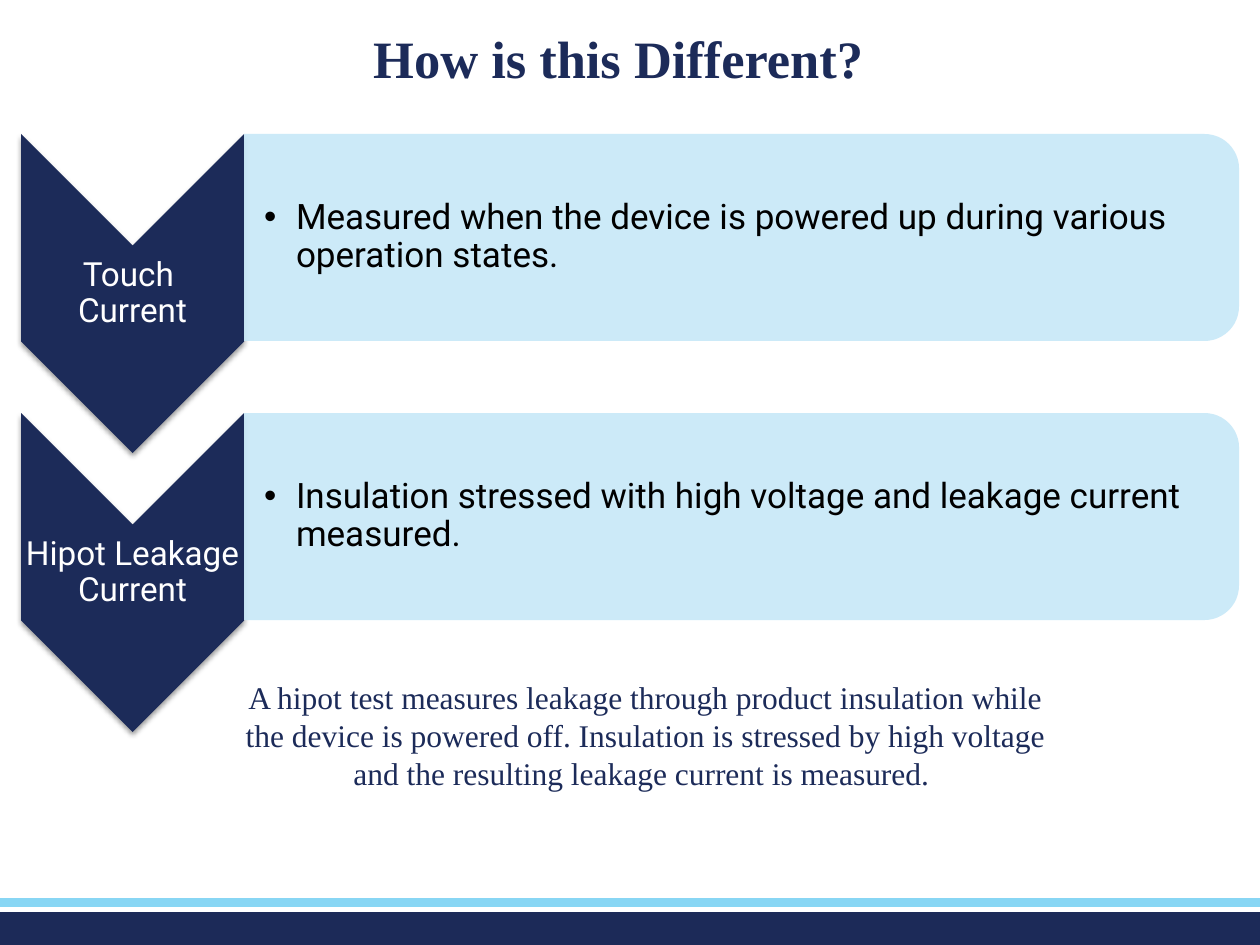
"""Build a slide that sets touch current against hipot leakage current."""
from dataclasses import dataclass

from lxml import etree
from pptx import Presentation
from pptx.dml.color import RGBColor
from pptx.enum.shapes import MSO_SHAPE
from pptx.enum.text import MSO_ANCHOR, MSO_AUTO_SIZE, PP_ALIGN
from pptx.oxml.ns import qn
from pptx.util import Emu, Pt

RECT = MSO_SHAPE.RECTANGLE
CHEVRON = MSO_SHAPE.CHEVRON
ROUND = MSO_SHAPE.ROUND_2_SAME_RECTANGLE
TOP, MIDDLE = MSO_ANCHOR.TOP, MSO_ANCHOR.MIDDLE
LEFT, CENTER = PP_ALIGN.LEFT, PP_ALIGN.CENTER
FIXED = MSO_AUTO_SIZE.NONE

NAVY = RGBColor(0x1C, 0x2B, 0x59)
DARK = RGBColor(0x1C, 0x2A, 0x58)
SKY = RGBColor(0x88, 0xD6, 0xF4)
PALE = RGBColor(0xC7, 0xE8, 0xF8)
WHITE = RGBColor(0xFF, 0xFF, 0xFF)
BLACK = RGBColor(0, 0, 0)

SERIF, SANS = "Times New Roman", "Roboto"
WIDE, HIGH = 1260, 945
ROW_TOP, ROW_STEP = 134, 279
PAD = (13, 6, 13, 6)


@dataclass(frozen=True)
class Box:
    """A visible area in px."""
    x: int
    y: int
    w: int
    h: int


@dataclass(frozen=True)
class Row:
    """A chevron label and its point."""
    label: str
    point: str


ROWS = (
    Row("Touch \vCurrent",
        "Measured when the device is powered up during various operation states."),
    Row("Hipot Leakage Current",
        "Insulation stressed with high voltage and leakage current measured."),
)
NOTE = ("A hipot test measures leakage through product insulation while the device "
        "is powered off. Insulation is stressed by high voltage and the resulting "
        "leakage current is measured. ")


def px(count: float) -> Emu:
    """Turn px into EMU."""
    return Emu(round(count * 914400 / 126))


def place(shape, box: Box) -> None:
    """Move a shape to a box."""
    shape.left, shape.top = px(box.x), px(box.y)
    shape.width, shape.height = px(box.w), px(box.h)


def draw(slide, kind, box: Box, fill: RGBColor, turn: bool = False):
    """Draw a plain shape, turned a quarter within its box if asked."""
    wide, high = (box.h, box.w) if turn else (box.w, box.h)
    left = box.x + (box.w - wide) / 2
    top = box.y + (box.h - high) / 2
    shape = slide.shapes.add_shape(kind, px(left), px(top), px(wide), px(high))
    shape.rotation = 90 if turn else 0
    shape.shadow.inherit = False
    shape.fill.solid()
    shape.fill.fore_color.rgb = fill
    shape.line.fill.background()
    return shape


def set_alpha(color, share: int) -> None:
    """Set the opacity of a colour element in percent."""
    etree.SubElement(color, qn("a:alpha")).set("val", str(share * 1000))


def add_shade(shape) -> None:
    """Give a shape a soft shadow below."""
    effect = shape.element.spPr.find(qn("a:effectLst"))
    shade = etree.SubElement(effect, qn("a:outerShdw"), blurRad=str(Pt(3.1)),
                             dist=str(Pt(1.6)), dir="5400000", rotWithShape="0")
    color = etree.SubElement(shade, qn("a:srgbClr"), val=str(BLACK))
    set_alpha(color, 38)


def write(shape, text: str, *, size: int, color: RGBColor, face: str = SANS,
          bold: bool = False, align=CENTER, anchor=MIDDLE, pad=PAD,
          lead: float = 1.0, bullet: bool = False) -> None:
    """Fill a shape with one formatted paragraph."""
    frame = shape.text_frame
    frame.word_wrap = True
    frame.auto_size = FIXED
    frame.vertical_anchor = anchor
    (frame.margin_left, frame.margin_top,
     frame.margin_right, frame.margin_bottom) = map(px, pad)
    para = frame.paragraphs[0]
    para.text = text
    para.alignment = align
    para.line_spacing = lead
    para.space_before = para.space_after = Pt(0)
    if bullet:
        props = para._p.get_or_add_pPr()
        props.set("marL", str(px(32)))
        props.set("indent", str(px(-32)))
        etree.SubElement(props, qn("a:buChar"), char="•")
    for run in para.runs:
        font = run.font
        font.size, font.name, font.bold = Pt(size), face, bold
        font.color.rgb = color


def draw_row(slide, row: Row, top: int, body) -> None:
    """Draw a chevron with its label, and a panel with its point."""
    arrow = draw(slide, CHEVRON, Box(21, top, 223, 319), NAVY, turn=True)
    add_shade(arrow)
    label = slide.shapes.add_textbox(0, 0, 0, 0)
    place(label, Box(21, top + 112, 223, 96))
    write(label, row.label, size=19, color=WHITE, pad=(1, 1, 1, 1), lead=0.9)

    panel = draw(slide, ROUND, Box(244, top, 995, 207), PALE, turn=True)
    set_alpha(panel.element.spPr.find(qn("a:solidFill"))[0], 90)
    panel.element.addnext(body.element)
    place(body, Box(244, top + 10, 985, 187))
    write(body, row.point, size=20, color=BLACK, align=LEFT,
          pad=(20, 1, 1, 1), lead=0.9, bullet=True)


def main() -> None:
    """Build and save the slide."""
    deck = Presentation()
    deck.slide_width, deck.slide_height = px(WIDE), px(HIGH)
    slide = deck.slides.add_slide(deck.slide_layouts[3])
    title, *lists = list(slide.placeholders)[:3]

    draw(slide, RECT, Box(0, 912, WIDE, 33), DARK)
    draw(slide, RECT, Box(0, 898, WIDE, 9), SKY)
    place(title, Box(100, 21, 1050, 73))
    write(title, "How is this Different? ", size=30, color=NAVY, face=SERIF, bold=True)

    note = slide.shapes.add_textbox(0, 0, 0, 0)
    place(note, Box(220, 672, 851, 165))
    write(note, NOTE, size=18, color=NAVY, face=SERIF, anchor=TOP)

    for index, (row, body) in enumerate(zip(ROWS, lists)):
        draw_row(slide, row, ROW_TOP + index * ROW_STEP, body)
    deck.save("out.pptx")


if __name__ == "__main__":
    main()
